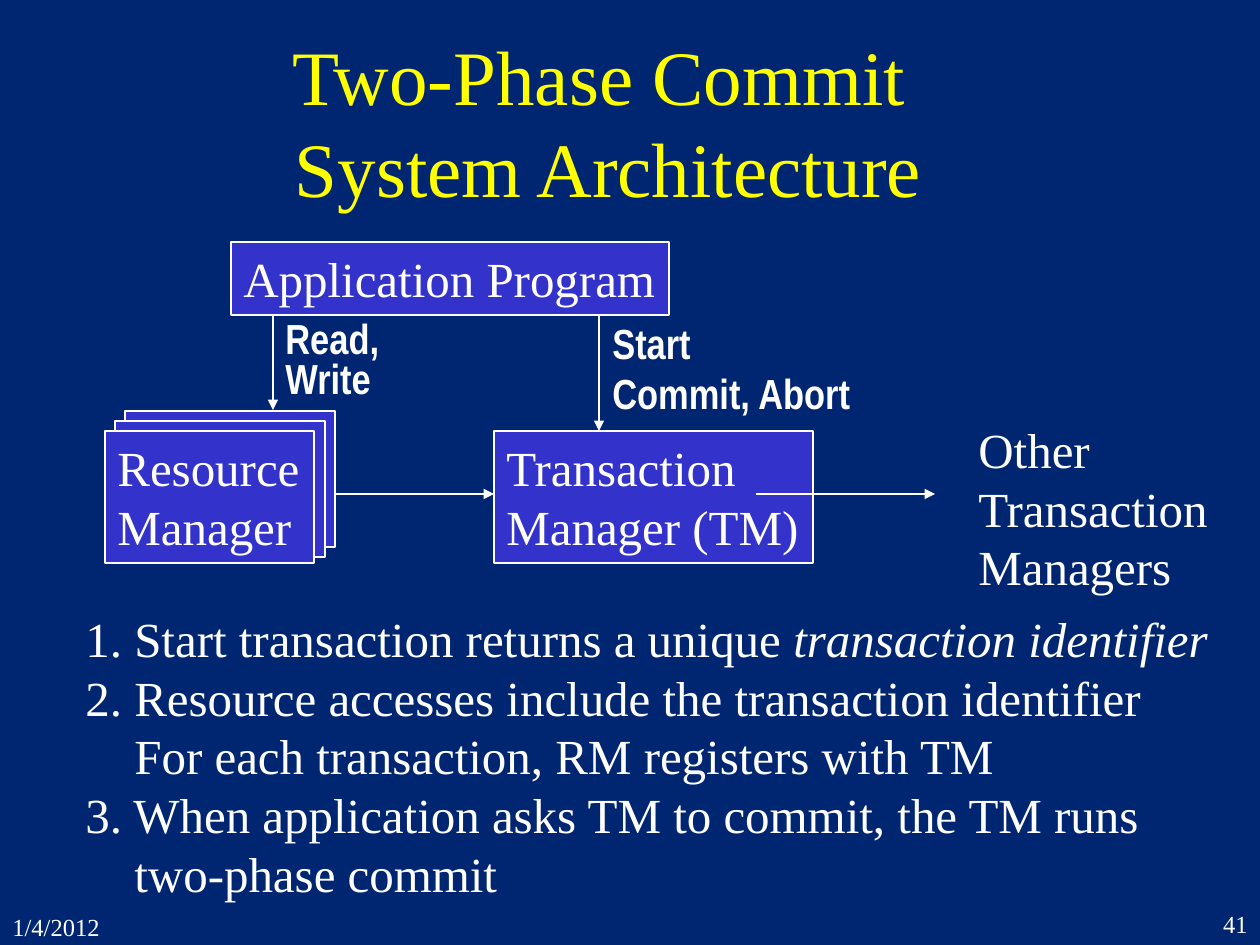
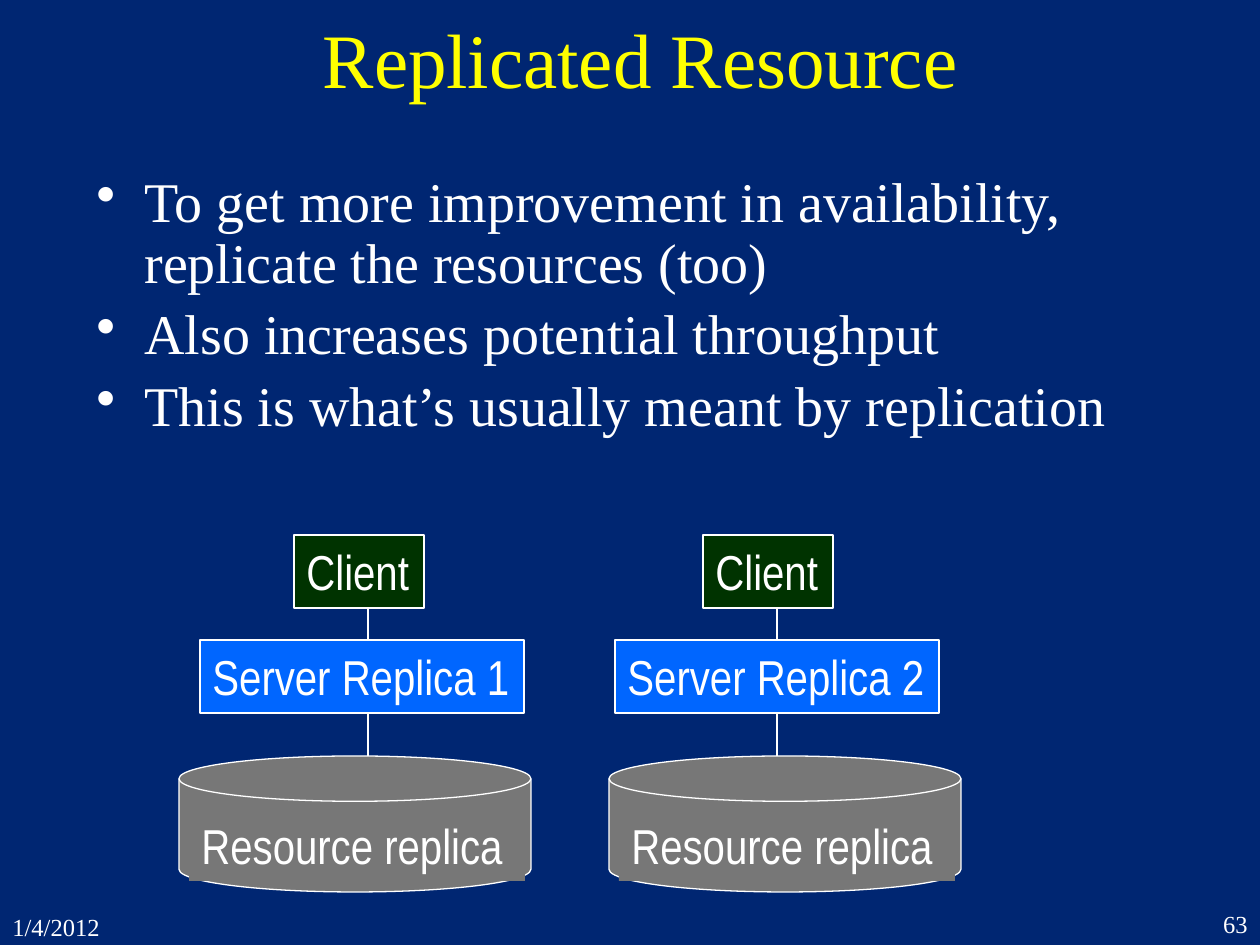
from dataclasses import dataclass

from pptx import Presentation
from pptx.dml.color import RGBColor
from pptx.enum.shapes import MSO_CONNECTOR, MSO_SHAPE
from pptx.enum.text import MSO_ANCHOR, MSO_AUTO_SIZE, PP_ALIGN
from pptx.oxml.ns import qn
from pptx.oxml.xmlchemy import OxmlElement
from pptx.presentation import Presentation as Deck
from pptx.shapes.autoshape import Shape
from pptx.slide import Slide
from pptx.text.text import _Paragraph as Paragraph
from pptx.util import Emu, Pt

PX_PER_INCH = 126
SERIF, NARROW = "Times New Roman", "Arial Narrow"
NAVY, WHITE, YELLOW = "002672", "FFFFFF", "FFFF00"
INDIGO, GREEN, BLUE, GREY = "3333CC", "003300", "0066FF", "777777"
TITLE_ONLY = 5


@dataclass(frozen=True)
class Frame:
    left: int
    top: int
    width: int
    height: int

    def emu(self) -> tuple[Emu, ...]:
        return tuple(px(n) for n in (self.left, self.top, self.width, self.height))


@dataclass(frozen=True)
class Style:
    size: int = 28
    font: str = SERIF
    colour: str = WHITE
    bold: bool = False
    align: PP_ALIGN = PP_ALIGN.LEFT
    spacings: tuple[float | None, ...] = ()
    space_before: float = 0
    hanging: int = 0
    bullet: str = ""
    wrap: bool = False


@dataclass(frozen=True)
class Label:
    frame: Frame
    lines: tuple[str, ...]
    style: Style = Style()


@dataclass(frozen=True)
class Box:
    frame: Frame
    fill: str
    lines: tuple[str, ...] = ()
    style: Style = Style()
    outlined: bool = True
    preset: MSO_SHAPE = MSO_SHAPE.RECTANGLE


@dataclass(frozen=True)
class Link:
    start: tuple[int, int]
    end: tuple[int, int]
    arrow: bool = False


@dataclass(frozen=True)
class Replica:
    number: int
    client_left: int
    server_left: int
    disk_left: int
    axis: int


TITLE = Style(44, colour=YELLOW, align=PP_ALIGN.CENTER, wrap=True)
DATE = Style(14, wrap=True)
NUMBER = Style(14, align=PP_ALIGN.RIGHT, wrap=True)
CALLS = Style(24, NARROW, bold=True, spacings=(0.8, 0.8))
REQUESTS = Style(24, NARROW, bold=True, spacings=(0.8, None))
STEPS = Style(hanging=49)
POINTS = Style(32, spacings=(0.9,) * 3, space_before=6.4, hanging=48, bullet="•", wrap=True)
NODE = Style(font=NARROW)
STORE = Style(font=NARROW, wrap=True)


def px(length: int) -> Emu:
    return Emu(round(length * 914400 / PX_PER_INCH))


def rgb(colour: str) -> RGBColor:
    return RGBColor.from_string(colour)


def format_runs(paragraph: Paragraph, style: Style) -> None:
    for run in paragraph.runs:
        run.font.size = Pt(style.size)
        run.font.name = style.font
        run.font.bold = style.bold
        run.font.color.rgb = rgb(style.colour)


def write(shape: Shape, lines: tuple[str, ...], style: Style,
          anchor: MSO_ANCHOR = MSO_ANCHOR.TOP) -> None:
    frame = shape.text_frame
    frame.word_wrap = style.wrap
    frame.auto_size = MSO_AUTO_SIZE.NONE if style.wrap else MSO_AUTO_SIZE.SHAPE_TO_FIT_TEXT
    frame.vertical_anchor = anchor
    for index, line in enumerate(lines):
        paragraph = frame.add_paragraph() if index else frame.paragraphs[0]
        paragraph.text = line
        paragraph.alignment = style.align
        if style.hanging:
            properties = paragraph._p.get_or_add_pPr()
            properties.set("marL", str(px(style.hanging)))
            properties.set("indent", str(-px(style.hanging)))
            if style.bullet:
                bullet = OxmlElement("a:buChar")
                bullet.set("char", style.bullet)
                properties.append(bullet)
        if style.spacings:
            paragraph.line_spacing = style.spacings[index]
        if index and style.space_before:
            paragraph.space_before = Pt(style.space_before)
        format_runs(paragraph, style)


def add_label(slide: Slide, label: Label) -> Shape:
    shape = slide.shapes.add_textbox(*label.frame.emu())
    write(shape, label.lines, label.style)
    return shape


def add_box(slide: Slide, box: Box) -> None:
    shape = slide.shapes.add_shape(box.preset, *box.frame.emu())
    shape.shadow.inherit = False
    shape.fill.solid()
    shape.fill.fore_color.rgb = rgb(box.fill)
    if box.outlined:
        shape.line.color.rgb = rgb(WHITE)
        shape.line.width = Pt(0.75)
    else:
        shape.line.fill.background()
    if box.lines:
        write(shape, box.lines, box.style)


def add_link(slide: Slide, link: Link) -> None:
    ends = [px(n) for n in (*link.start, *link.end)]
    connector = slide.shapes.add_connector(MSO_CONNECTOR.STRAIGHT, *ends)
    connector.line.color.rgb = rgb(WHITE)
    connector.line.width = Pt(0.75)
    properties = connector._element.spPr
    if link.arrow:
        head = OxmlElement("a:tailEnd")
        head.set("type", "triangle")
        properties.find(qn("a:ln")).append(head)
    properties.append(OxmlElement("a:effectLst"))


def add_slide(deck: Deck, title: str, frame: Frame, number: str) -> Slide:
    slide = deck.slides.add_slide(deck.slide_layouts[TITLE_ONLY])
    heading = slide.shapes.title
    heading.left, heading.top, heading.width, heading.height = frame.emu()
    write(heading, (title,), TITLE, MSO_ANCHOR.MIDDLE)
    add_label(slide, Label(Frame(0, 906, 147, 32), ("1/4/2012",), DATE))
    add_label(slide, Label(Frame(1166, 903, 94, 42), (number,), NUMBER))
    return slide


def build_architecture(deck: Deck) -> None:
    slide = add_slide(deck, "Two-Phase Commit \nSystem Architecture",
                      Frame(73, 42, 1071, 158), "41")
    for depth in (2, 1):
        add_box(slide, Box(Frame(105 + 10 * depth, 431 - 10 * depth, 210, 136), INDIGO))
    for box in (
        Box(Frame(105, 431, 209, 132), INDIGO, ("Resource", "Manager")),
        Box(Frame(494, 431, 319, 132), INDIGO, ("Transaction", "Manager (TM)")),
        Box(Frame(231, 242, 438, 73), INDIGO, ("Application Program",)),
    ):
        add_box(slide, box)
    for link in (
        Link((273, 315), (273, 410), True),
        Link((599, 315), (599, 431), True),
        Link((336, 494), (494, 494), True),
        Link((756, 494), (935, 494), True),
    ):
        add_link(slide, link)
    for label in (
        Label(Frame(966, 413, 256, 189), ("Other", "Transaction", "Managers")),
        Label(Frame(600, 321, 265, 103), ("Start", "Commit, Abort"), REQUESTS),
        Label(Frame(273, 316, 120, 93), ("Read,", "Write"), CALLS),
    ):
        add_label(slide, label)
    steps = add_label(slide, Label(Frame(73, 602, 1148, 307), (
        "1. Start transaction returns a unique ",
        "2. Resource accesses include the transaction identifier\n"
        "For each transaction, RM registers with TM",
        "3. When application asks TM to commit, the TM runs\ntwo-phase commit",
    ), STEPS))
    first_step = steps.text_frame.paragraphs[0]
    identifier = first_step.add_run()
    identifier.text = "transaction identifier"
    format_runs(first_step, STEPS)
    identifier.font.italic = True


def add_replica(slide: Slide, replica: Replica) -> None:
    for box in (
        Box(Frame(replica.disk_left, 756, 352, 136), GREY,
            preset=MSO_SHAPE.FLOWCHART_MAGNETIC_DISK),
        Box(Frame(replica.disk_left + 10, 809, 336, 72), GREY,
            ("Resource replica",), STORE, outlined=False),
        Box(Frame(replica.server_left, 640, 324, 73), BLUE,
            (f"Server Replica {replica.number}",), NODE),
        Box(Frame(replica.client_left, 535, 130, 73), GREEN, ("Client",), NODE),
    ):
        add_box(slide, box)
    for top, bottom in ((608, 640), (714, 756)):
        add_link(slide, Link((replica.axis, top), (replica.axis, bottom)))


def build_replication(deck: Deck) -> None:
    slide = add_slide(deck, "Replicated Resource", Frame(105, 0, 1071, 116), "63")
    add_label(slide, Label(Frame(84, 168, 1061, 336), (
        "To get more improvement in availability,\nreplicate the resources (too)",
        "Also increases potential throughput",
        "This is what’s usually meant by replication",
    ), POINTS))
    for replica in (Replica(1, 294, 200, 179, 368), Replica(2, 703, 615, 609, 777)):
        add_replica(slide, replica)


def main() -> None:
    deck = Presentation()
    deck.slide_width, deck.slide_height = px(1260), px(945)
    backdrop = deck.slide_master.background.fill
    backdrop.solid()
    backdrop.fore_color.rgb = rgb(NAVY)
    build_architecture(deck)
    build_replication(deck)
    deck.save("out.pptx")


if __name__ == "__main__":
    main()
